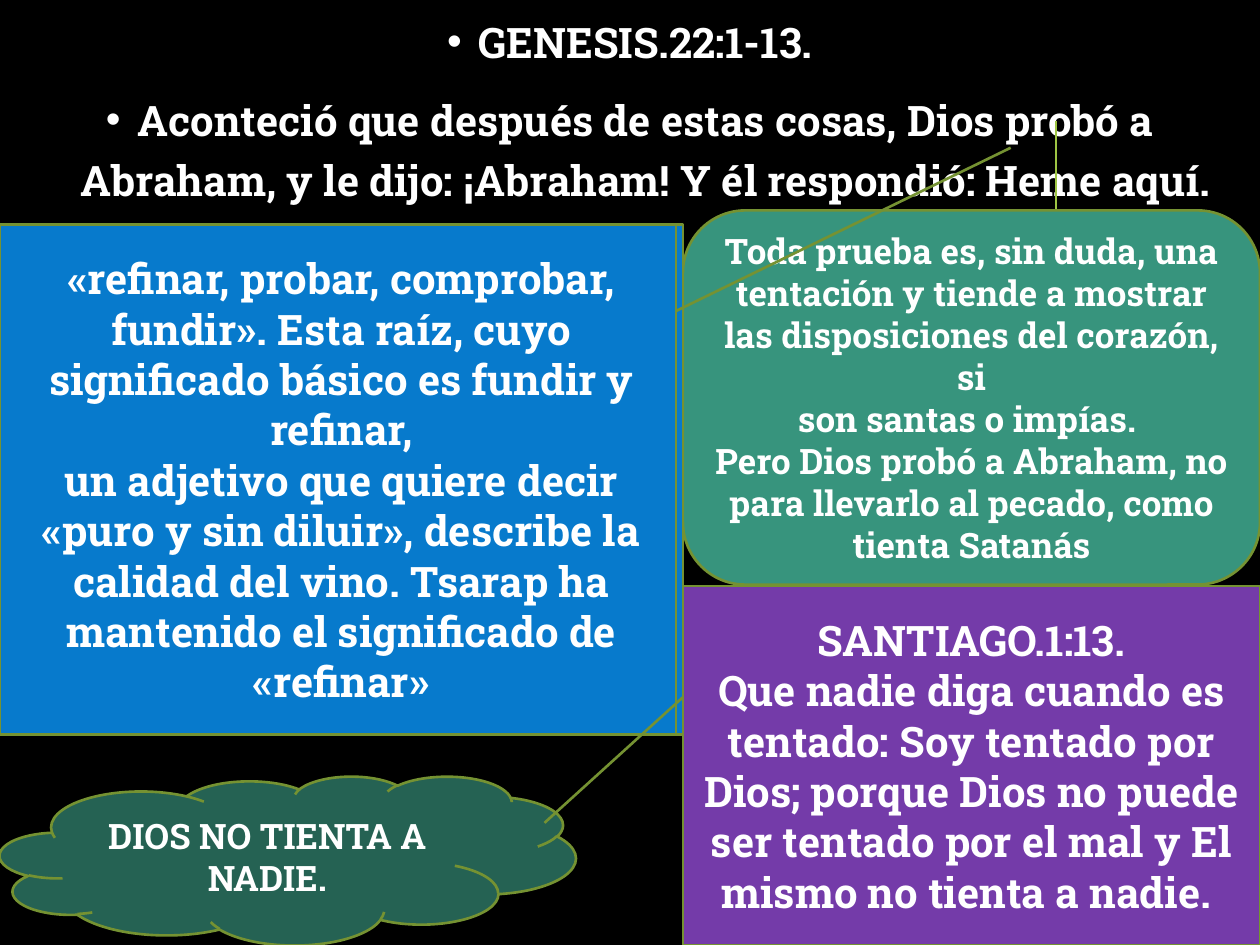
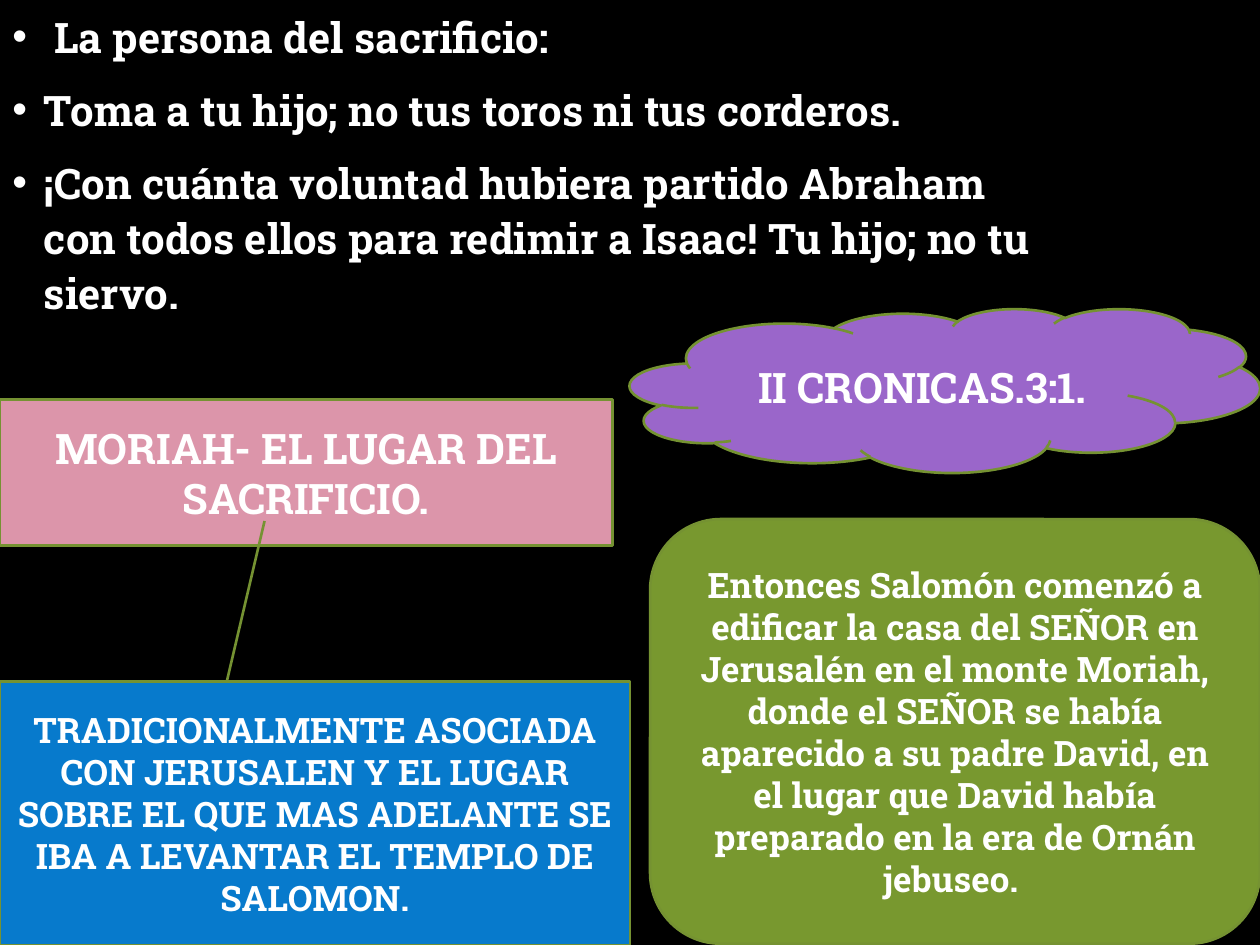
import pptx
import pptx.util
import pptx.dml.color
import pptx.enum.shapes
import pptx.enum.text
import lxml.etree
from dataclasses import dataclass

Inches = pptx.util.Inches
Pt = pptx.util.Pt
Shape = pptx.enum.shapes.MSO_SHAPE
Align = pptx.enum.text.PP_ALIGN
Anchor = pptx.enum.text.MSO_ANCHOR
RGB = pptx.dml.color.RGBColor.from_string
NS = "http://schemas.openxmlformats.org/drawingml/2006/main"


@dataclass(frozen=True)
class Theme:
    font: str = "Roboto Slab"
    background: str = "000000"
    text: str = "FFFFFF"
    outline: str = "759232"
    arrow: str = "9EC544"
    blue: str = "077ACC"
    teal: str = "37947D"
    dark_teal: str = "256253"
    purple: str = "743BA9"
    lilac: str = "9A66CA"
    pink: str = "DC95AA"
    olive: str = "78982F"
    large: int = 24
    small: int = 20
    outline_width: float = 1.5
    arrow_width: float = 1
    bullet_gap: int = 10
    bullet_indent: float = 0.25


T = Theme()
W, H = 10, 7.5
SPLIT = 5.42
ACCENT_CALLOUT = Shape.LINE_CALLOUT_1_BORDER_AND_ACCENT_BAR

SLIDES = [
    dict(
        verses=dict(
            box=(0, 0, W, 1.77), align=Align.CENTER, spacing=1.2,
            lines=[
                "GENESIS.22:1-13.",
                "Aconteció que después de estas cosas, Dios probó a Abraham, y le dijo: "
                "¡Abraham! Y él respondió: Heme aquí.",
            ]),
        arrows=[((8.38, 0.96), (8.38, 1.99))],
        panels=[
            dict(kind=Shape.ROUNDED_RECTANGLE, box=(SPLIT, 1.67, W - SPLIT, 2.97),
                 fill=T.teal, size=T.small, lines=[
                     "Toda prueba es, sin duda, una tentación y tiende a mostrar las "
                     "disposiciones del corazón, si",
                     "son santas o impías. ",
                     "Pero Dios probó a Abraham, no para llevarlo al pecado, como tienta Satanás",
                 ]),
            dict(kind=ACCENT_CALLOUT, box=(0, 1.78, SPLIT, 4.05),
                 pointer=(0.17, 0.99, -0.15, 1.48), fill=T.blue, size=T.large, lines=[
                     "«refinar, probar, comprobar, fundir». Esta raíz, cuyo significado "
                     "básico es fundir y refinar,",
                     "un adjetivo que quiere decir «puro y sin diluir», describe la calidad "
                     "del vino. Tsarap ha mantenido el significado de «refinar»",
                 ]),
            dict(kind=Shape.CLOUD, box=(0, 6.16, 4.57, H - 6.16),
                 fill=T.dark_teal, size=T.small, lines=["DIOS NO TIENTA A NADIE."]),
            dict(kind=ACCENT_CALLOUT, box=(SPLIT, 4.65, W - SPLIT, H - 4.65),
                 pointer=(0.31, 0, 0.66, -0.24), fill=T.purple, size=T.large, lines=[
                     "SANTIAGO.1:13.",
                     "Que nadie diga cuando es tentado: Soy tentado por Dios; porque Dios no "
                     "puede ser tentado por el mal y El mismo no tienta a nadie. ",
                 ]),
        ]),
    dict(
        verses=dict(
            box=(0, 0, 8.49, 2.58), align=Align.LEFT, spacing=1.1,
            lines=[
                " La persona del sacrificio:",
                "Toma a tu hijo; no tus toros ni tus corderos.",
                "¡Con cuánta voluntad hubiera partido Abraham con todos ellos para redimir "
                "a Isaac! Tu hijo; no tu siervo.",
            ]),
        arrows=[],
        panels=[
            dict(kind=Shape.RECTANGLE, box=(0, 3.17, 4.86, 1.16),
                 fill=T.pink, size=T.large, lines=["MORIAH- EL LUGAR DEL SACRIFICIO."]),
            dict(kind=Shape.LINE_CALLOUT_1, box=(0, 5.41, W / 2, H - 5.41),
                 pointer=(0, 0.36, -0.61, 0.42), fill=T.blue, size=T.small, lines=[
                     "TRADICIONALMENTE ASOCIADA CON JERUSALEN Y EL LUGAR SOBRE EL QUE MAS "
                     "ADELANTE SE IBA A LEVANTAR EL TEMPLO DE SALOMON.",
                 ]),
            dict(kind=Shape.CLOUD, box=(W / 2, 2.45, W / 2, 1.3),
                 fill=T.lilac, size=T.large, lines=["II CRONICAS.3:1."]),
            dict(kind=Shape.ROUNDED_RECTANGLE, box=(5.16, 4.12, W - 5.16, 3.37),
                 fill=T.olive, size=T.small, lines=[
                     "Entonces Salomón comenzó a edificar la casa del SEÑOR en Jerusalén en "
                     "el monte Moriah, donde el SEÑOR se había aparecido a su padre David, en "
                     "el lugar que David había preparado en la era de Ornán jebuseo. ",
                 ]),
        ]),
]


def inches(values):
    return [Inches(v) for v in values]


def add_xml(parent, tag, **attributes):
    return lxml.etree.SubElement(parent, f"{{{NS}}}{tag}", **attributes)


def write(tf, lines, size, align):
    tf.word_wrap = True
    for i, line in enumerate(lines):
        p = tf.paragraphs[0] if i == 0 else tf.add_paragraph()
        p.text = line
        p.alignment = align
        p.font.name = T.font
        p.font.size = Pt(size)
        p.font.bold = True
        p.font.color.rgb = RGB(T.text)


def add_verses(s, box, align, spacing, lines):
    tf = s.shapes.add_textbox(*inches(box)).text_frame
    write(tf, lines, T.large, align)
    indent = Inches(T.bullet_indent)
    for p in tf.paragraphs:
        p.line_spacing = spacing
        p.space_before = Pt(T.bullet_gap)
        pPr = p._p.get_or_add_pPr()
        pPr.set("marL", str(indent))
        pPr.set("indent", str(-indent))
        bullet_font = lxml.etree.Element(f"{{{NS}}}buFont", typeface="Arial")
        bullet = lxml.etree.Element(f"{{{NS}}}buChar", char="•")
        pPr.find(f"{{{NS}}}defRPr").addprevious(bullet_font)
        bullet_font.addnext(bullet)


def add_arrow(s, start, end):
    line = s.shapes.add_connector(
        pptx.enum.shapes.MSO_CONNECTOR.STRAIGHT, *inches(start + end))
    line.line.color.rgb = RGB(T.arrow)
    line.line.width = Pt(T.arrow_width)
    add_xml(line.line._get_or_add_ln(), "tailEnd", type="triangle")
    add_xml(line._element.spPr, "effectLst")


def add_panel(s, kind, box, fill, size, lines, pointer=()):
    sp = s.shapes.add_shape(kind, *inches(box))
    sp.shadow.inherit = False
    sp.fill.solid()
    sp.fill.fore_color.rgb = RGB(fill)
    sp.line.color.rgb = RGB(T.outline)
    sp.line.width = Pt(T.outline_width)
    for i, value in enumerate(pointer):
        sp.adjustments[i] = value
    sp.text_frame.vertical_anchor = Anchor.MIDDLE
    write(sp.text_frame, lines, size, Align.CENTER)


def main():
    prs = pptx.Presentation()
    prs.slide_width, prs.slide_height = inches((W, H))
    for content in SLIDES:
        s = prs.slides.add_slide(prs.slide_layouts[6])
        s.background.fill.solid()
        s.background.fill.fore_color.rgb = RGB(T.background)
        add_verses(s, **content["verses"])
        for start, end in content["arrows"]:
            add_arrow(s, start, end)
        for panel in content["panels"]:
            add_panel(s, **panel)
    prs.save("out.pptx")


if __name__ == "__main__":
    main()
